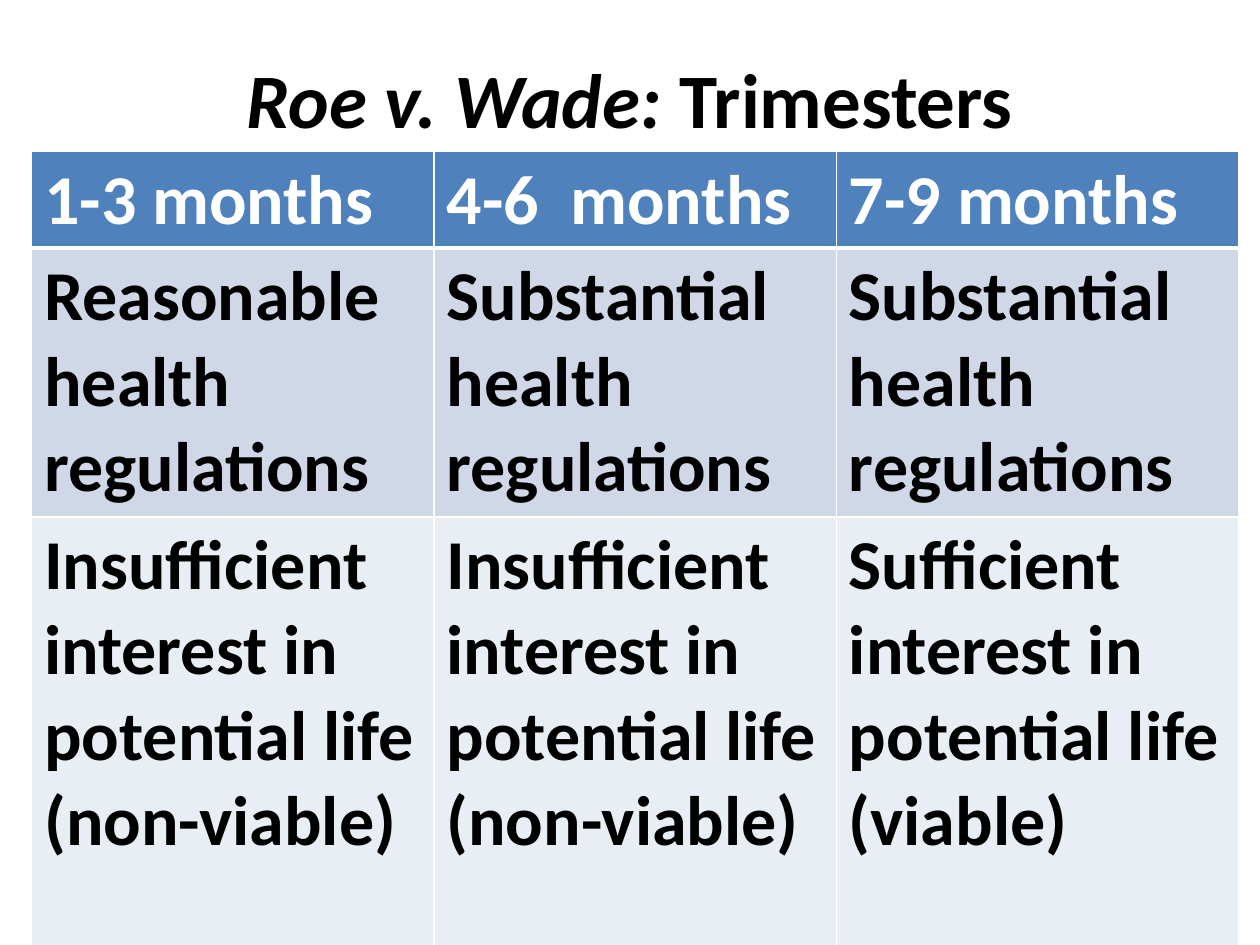
from lxml import etree
from pptx import Presentation
from pptx.dml.color import RGBColor
from pptx.enum.text import MSO_ANCHOR, PP_ALIGN
from pptx.oxml.ns import qn
from pptx.util import Cm, Pt

CENTER = PP_ALIGN.CENTER
LEFT = PP_ALIGN.LEFT
MIDDLE = MSO_ANCHOR.MIDDLE

COLORS = {
    "text": "000000",
    "white": "FFFFFF",
    "header": "4F81BD",
    "health": "D0D8E8",
    "life": "E9EDF4",
}
FONT = "Calibri"
BLANK_LAYOUT = 6

TRIMESTER_ROWS = [
    ("header", 1.94, ["1-3 months", "4-6  months", "7-9 months"]),
    ("health", 5.42, [
        "Reasonable health regulations",
        "Substantial health regulations",
        "Substantial health regulations",
    ]),
    ("life", 8.64, [
        "Insufficient interest in potential life (non-viable)",
        "Insufficient interest in potential life (non-viable)",
        "Sufficient interest in potential life (viable)",
    ]),
]


def add_text(para, text, size=40, color="text", bold=True, italic=False, align=LEFT):
    para.alignment = align
    span = para.add_run()
    span.text = text
    font = span.font
    font.name = FONT
    font.size = Pt(size)
    font.bold = bold
    font.italic = italic
    font.color.rgb = RGBColor.from_string(COLORS[color])


def add_title(page):
    box = page.shapes.add_textbox(Cm(1.27), Cm(0.76), Cm(22.86), Cm(2.41))
    frame = box.text_frame
    frame.word_wrap = True
    frame.vertical_anchor = MIDDLE
    para = frame.paragraphs[0]
    add_text(para, "Roe v. Wade: ", size=44, italic=True, align=CENTER)
    add_text(para, "Trimesters", size=44, align=CENTER)


def set_borders(cell, widths):
    properties = cell._tc.get_or_add_tcPr()
    for position, (side, width) in enumerate(widths.items()):
        line = etree.Element(qn(f"a:ln{side}"), w=str(Pt(width)))
        fill = etree.SubElement(line, qn("a:solidFill"))
        etree.SubElement(fill, qn("a:srgbClr"), val=COLORS["white"])
        properties.insert(position, line)


def add_trimester_table(page):
    height = sum(row[1] for row in TRIMESTER_ROWS)
    columns = len(TRIMESTER_ROWS[0][2])
    table = page.shapes.add_table(
        len(TRIMESTER_ROWS), columns, Cm(0.64), Cm(3.05), Cm(24.33), Cm(height)
    ).table
    for row_index, (kind, row_height, texts) in enumerate(TRIMESTER_ROWS):
        table.rows[row_index].height = Cm(row_height)
        widths = {
            "L": 1,
            "R": 1,
            "T": 3 if row_index == 1 else 1,
            "B": 3 if row_index == 0 else 1,
        }
        for column_index, text in enumerate(texts):
            cell = table.cell(row_index, column_index)
            cell.fill.solid()
            cell.fill.fore_color.rgb = RGBColor.from_string(COLORS[kind])
            set_borders(cell, widths)
            color = "white" if kind == "header" else "text"
            add_text(cell.text_frame.paragraphs[0], text, color=color)


def main():
    deck = Presentation()
    deck.slide_width = Cm(25.4)
    deck.slide_height = Cm(19.05)
    page = deck.slides.add_slide(deck.slide_layouts[BLANK_LAYOUT])
    add_title(page)
    add_trimester_table(page)
    deck.save("out.pptx")


if __name__ == "__main__":
    main()
